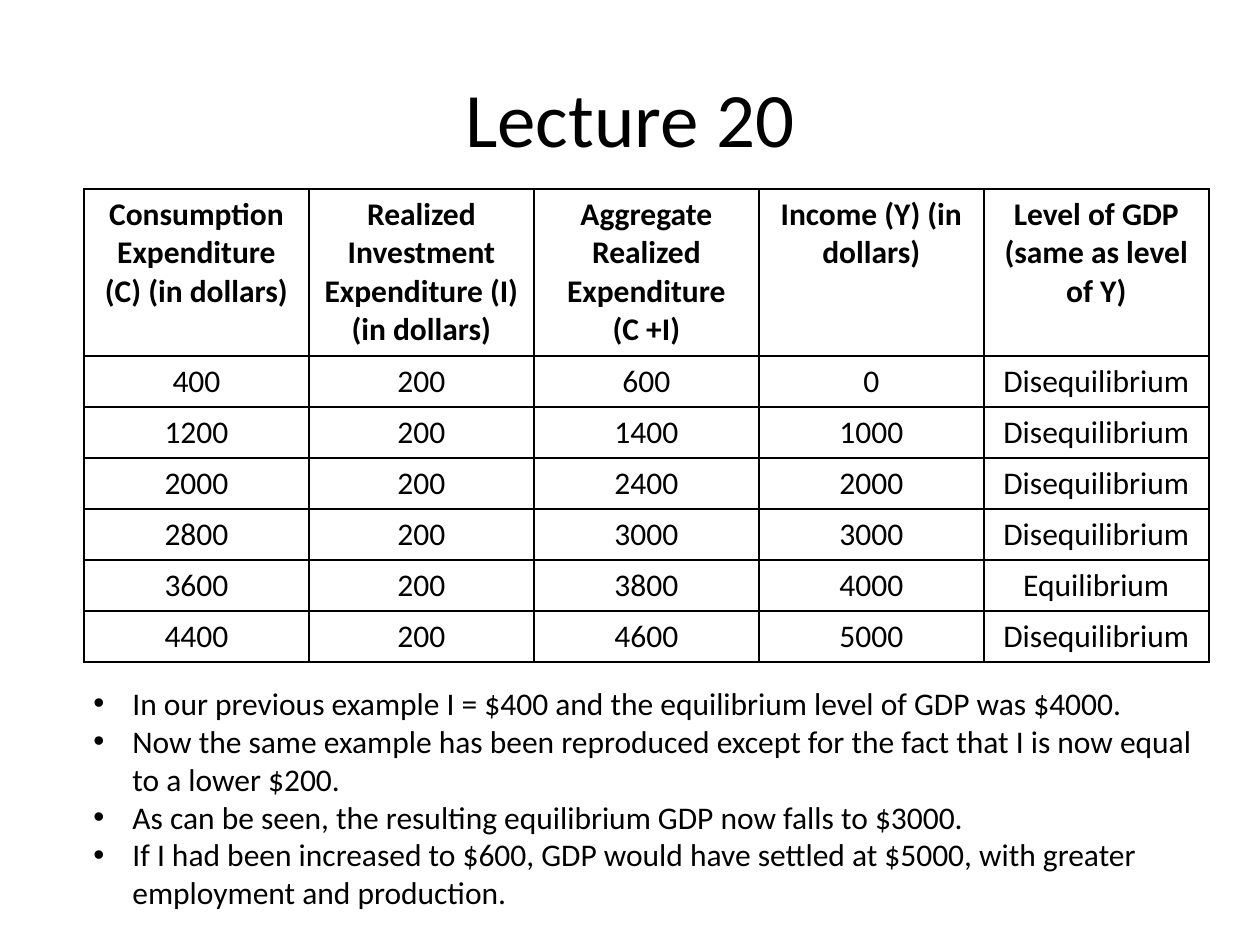
import pptx
import pptx.dml.color
import pptx.enum.text
import pptx.oxml
import pptx.oxml.ns
import pptx.util

SCALE = 914400 / 126
MID = pptx.enum.text.PP_ALIGN.CENTER

HEADS = [
    "Consumption Expenditure (C) (in dollars)",
    "Realized Investment Expenditure (I) (in dollars)",
    "Aggregate Realized Expenditure\n(C +I)",
    "Income (Y) (in dollars)",
    "Level of GDP (same as level of Y)",
]
ROWS = [
    (400, 200, 600, 0, "Disequilibrium"),
    (1200, 200, 1400, 1000, "Disequilibrium"),
    (2000, 200, 2400, 2000, "Disequilibrium"),
    (2800, 200, 3000, 3000, "Disequilibrium"),
    (3600, 200, 3800, 4000, "Equilibrium"),
    (4400, 200, 4600, 5000, "Disequilibrium"),
]
NOTES = [
    "In our previous example I = $400 and the equilibrium level of GDP was $4000.",
    "Now the same example has been reproduced except for the fact that I is now "
    "equal to a lower $200.",
    "As can be seen, the resulting equilibrium GDP now falls to $3000.",
    "If I had been increased to $600, GDP would have settled at $5000, with "
    "greater employment and production.",
]


def px(n):
    return pptx.util.Emu(round(n * SCALE))


def color(code):
    return pptx.dml.color.RGBColor.from_string(code)


def node(tag, **attrs):
    item = pptx.oxml.parse_xml(f"<a:{tag} {pptx.oxml.ns.nsdecls('a')}/>")
    for key, value in attrs.items():
        item.set(key, str(value))
    return item


class Deck:
    """Holds the text style and the current slide."""

    face = "Calibri"
    ink = "000000"

    def __init__(self, wide, high):
        self.show = pptx.Presentation()
        self.show.slide_width, self.show.slide_height = px(wide), px(high)
        self.slide = self.show.slides.add_slide(self.show.slide_layouts[6])

    def style(self, para, size, bold=False, align=None):
        para.alignment = align
        font = para.font
        font.name, font.size, font.bold = self.face, pptx.util.Pt(size), bold
        font.color.rgb = color(self.ink)

    def box(self, left, top, wide, high, text):
        shape = self.slide.shapes.add_textbox(px(left), px(top), px(wide), px(high))
        frame = shape.text_frame
        frame.word_wrap = True
        frame.text = text
        return frame

    def title(self, left, top, wide, high, text):
        frame = self.box(left, top, wide, high, text)
        frame.vertical_anchor = pptx.enum.text.MSO_ANCHOR.MIDDLE
        self.style(frame.paragraphs[0], 44, align=MID)

    def bullets(self, left, top, wide, high, lines, indent):
        frame = self.box(left, top, wide, high, "\n".join(lines))
        for para in frame.paragraphs:
            props = para._p.get_or_add_pPr()
            props.set("marL", str(px(indent)))
            props.set("indent", str(-px(indent)))
            props.append(node("buFont", typeface="Arial"))
            props.append(node("buChar", char="•"))
            self.style(para, 18)

    def border(self, cell):
        props = cell._tc.get_or_add_tcPr()
        for side in "LRTB":
            line = node(f"ln{side}", w=pptx.util.Pt(1))
            fill = node("solidFill")
            fill.append(node("srgbClr", val=self.ink))
            line.append(fill)
            props.append(line)

    def table(self, left, top, wide, heights, rows):
        """Draw equal columns; the first row is the bold header."""
        count = len(rows[0])
        table = self.slide.shapes.add_table(
            len(rows), count, px(left), px(top), px(wide * count), px(sum(heights))
        ).table
        table.first_row = table.horz_banding = False
        for col in table.columns:
            col.width = px(wide)
        for r, (row, high) in enumerate(zip(rows, heights)):
            table.rows[r].height = px(high)
            for c, value in enumerate(row):
                cell = table.cell(r, c)
                cell.text = str(value)
                self.border(cell)
                cell.fill.background()
                for para in cell.text_frame.paragraphs:
                    self.style(para, 18, bold=r == 0, align=MID)


def main():
    deck = Deck(1260, 945)
    deck.title(63, 38, 1134, 158, "Lecture 20")
    deck.table(84, 189, 225, [167] + [51] * len(ROWS), [HEADS] + ROWS)
    deck.bullets(81, 678, 1126, 242, NOTES, indent=39)
    deck.show.save("out.pptx")


if __name__ == "__main__":
    main()
